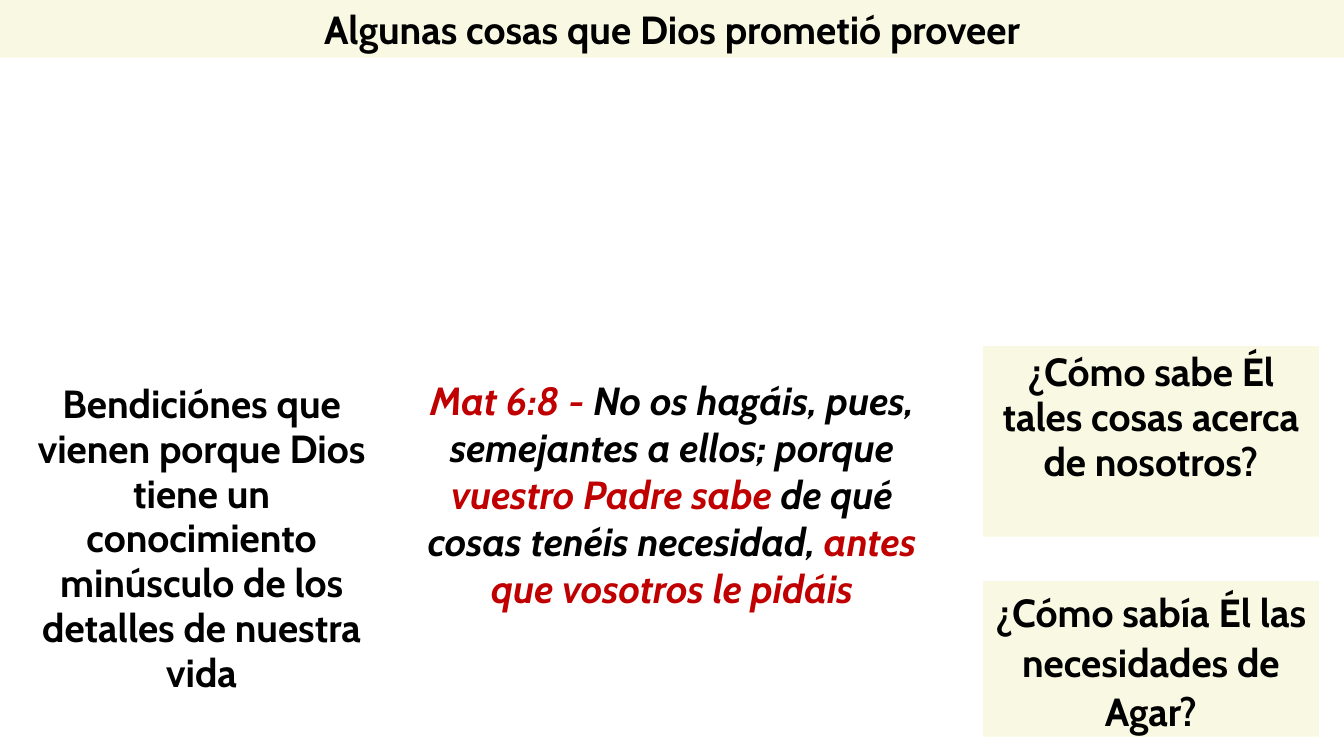
from pptx import Presentation
from pptx.dml.color import RGBColor
from pptx.enum.shapes import MSO_SHAPE as Shape
from pptx.enum.text import MSO_ANCHOR as Anchor, MSO_AUTO_SIZE as AutoSize, PP_ALIGN as Align
from pptx.util import Inches, Pt

COLORS = {"ink": "000000", "accent": "C00000", "cream": "F9F9E3"}
FONT = "Cabin"
FONT_SIZE = Pt(28)
COLUMNS, ROWS = 160, 90
TITLE_ONLY = 5


def color(name):
    return RGBColor.from_string(COLORS[name])


def grid_area(deck, column, row, columns, rows):
    """Turn a cell range of the slide grid into left, top, width, height."""
    cell_width, cell_height = deck.slide_width / COLUMNS, deck.slide_height / ROWS
    return (round(column * cell_width), round(row * cell_height),
            round(columns * cell_width), round(rows * cell_height))


def write(box, spans, spacing=1.0, italic=False):
    """Fill a shape with one centred paragraph of (text, colour name) spans."""
    frame = box.text_frame
    frame.word_wrap = True
    frame.auto_size = AutoSize.NONE
    frame.vertical_anchor = Anchor.TOP
    para = frame.paragraphs[0]
    para.alignment = Align.CENTER
    para.line_spacing = spacing
    for text, ink in spans:
        span = para.add_run()
        span.text = text
        span.font.name = FONT
        span.font.size = FONT_SIZE
        span.font.bold = True
        span.font.italic = italic
        span.font.color.rgb = color(ink)


def fill_cream(box):
    box.fill.solid()
    box.fill.fore_color.rgb = color("cream")
    box.line.fill.background()


def add_title(page, area, text):
    title = page.shapes.title
    title.left, title.top, title.width, title.height = area
    fill_cream(title)
    write(title, [(text, "ink")])


def add_question(page, area, text, spacing):
    panel = page.shapes.add_shape(Shape.RECTANGLE, *area)
    panel.shadow.inherit = False
    fill_cream(panel)
    write(panel, [(text, "ink")], spacing)


def add_passage(page, area, spans, **style):
    write(page.shapes.add_textbox(*area), spans, **style)


def main():
    deck = Presentation()
    deck.slide_width, deck.slide_height = Inches(13.33), Inches(7.5)
    page = deck.slides.add_slide(deck.slide_layouts[TITLE_ONLY])

    add_title(page, grid_area(deck, 0, 0, COLUMNS, 6.87),
              "Algunas cosas que Dios prometió proveer")
    add_passage(page, grid_area(deck, 1, 45, 46, 38.8), [
        ("Bendiciónes que vienen porque Dios tiene un conocimiento "
         "minúsculo de los detalles de nuestra vida", "ink"),
    ], spacing=0.95)
    add_passage(page, grid_area(deck, 49, 44.2, 62, 35.2), [
        ("Mat 6:8 - ", "accent"),
        ("No os hagáis, pues, semejantes a ellos; porque ", "ink"),
        ("vuestro Padre sabe ", "accent"),
        ("de qué cosas tenéis necesidad, ", "ink"),
        ("antes que vosotros le pidáis", "accent"),
    ], italic=True)

    questions = [
        (41.2, 22.7, "¿Cómo sabe Él tales cosas acerca de nosotros?", 0.95),
        (69.2, 18.5, "¿Cómo sabía Él las necesidades de Agar?", 1.05),
    ]
    for row, rows, text, spacing in questions:
        add_question(page, grid_area(deck, 117, row, 40, rows), text, spacing)

    deck.save("out.pptx")


if __name__ == "__main__":
    main()
